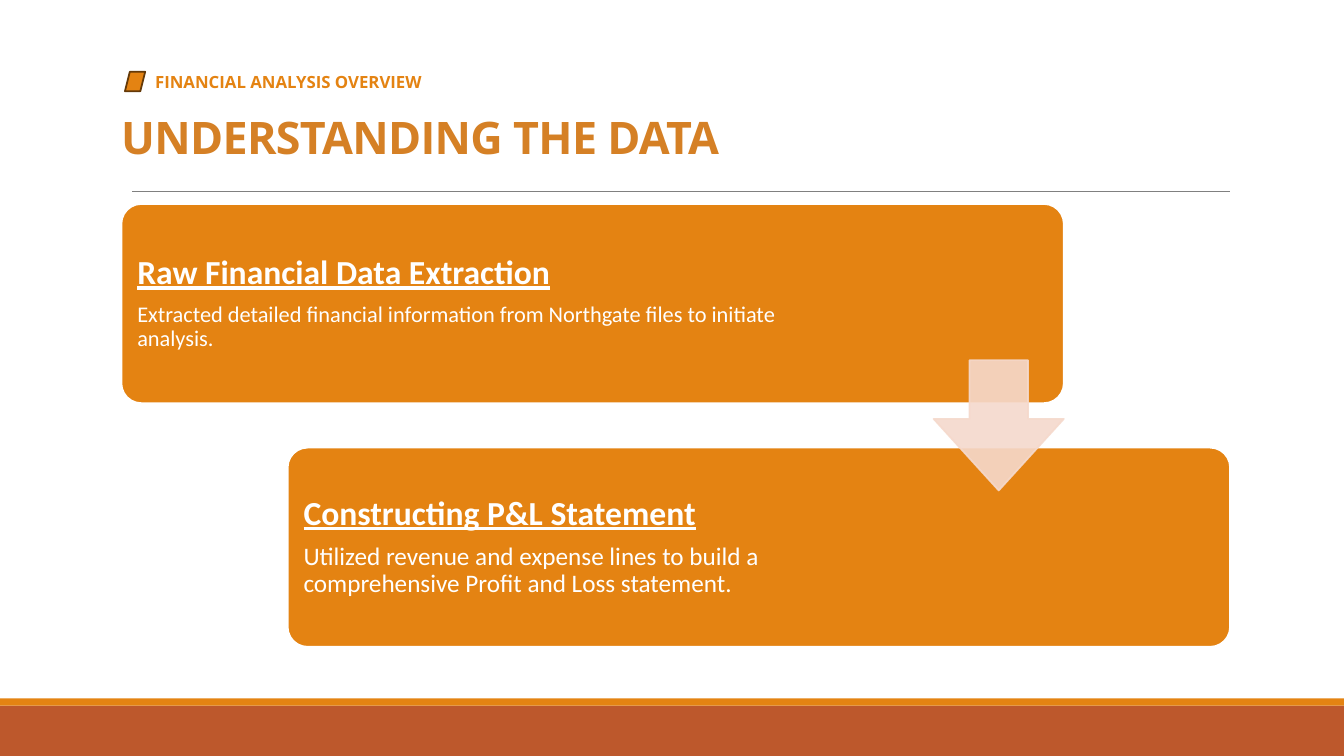
from lxml import etree
from pptx import Presentation
from pptx.dml.color import RGBColor
from pptx.enum.shapes import MSO_CONNECTOR, MSO_SHAPE
from pptx.enum.text import MSO_ANCHOR, PP_ALIGN
from pptx.oxml.ns import qn
from pptx.util import Cm, Pt

RECTANGLE, ROUNDED = MSO_SHAPE.RECTANGLE, MSO_SHAPE.ROUNDED_RECTANGLE
PARALLELOGRAM, DOWN_ARROW = MSO_SHAPE.PARALLELOGRAM, MSO_SHAPE.DOWN_ARROW
TOP, MIDDLE, BOTTOM = MSO_ANCHOR.TOP, MSO_ANCHOR.MIDDLE, MSO_ANCHOR.BOTTOM
STRAIGHT, LEFT = MSO_CONNECTOR.STRAIGHT, PP_ALIGN.LEFT

TITLE = "UNDERSTANDING THE DATA"
OVERLINE = "FINANCIAL ANALYSIS OVERVIEW"
# heading, body, body size in points, text width in cm
STEPS = [
    ("Raw Financial Data Extraction",
     "Extracted detailed financial information from Northgate files to initiate analysis.",
     16, 18.54),
    ("Constructing P&L Statement",
     "Utilized revenue and expense lines to build a comprehensive Profit and Loss statement.",
     18, 16),
]
COLORS = {"orange": "E48312", "rust": "BD582C", "title": "D58025", "brown": "643908",
          "arrow": "F5D9CC", "rule": "808080", "white": "FFFFFF"}
HEADING_FONT, BODY_FONT = "Open Sans", "Calibri"

# Lengths in cm
SLIDE_WIDTH, SLIDE_HEIGHT = 33.87, 19.05
FOOTER_TOP, STRIPE_HEIGHT = 17.78, 0.18
CARD_LEFT, CARD_TOP, CARD_WIDTH, CARD_HEIGHT = 3.06, 5.14, 23.75, 5.02
STEP_RIGHT, STEP_DOWN = 4.19, 6.14
TEXT_MARGIN, CARD_INSET = 0.25, 0.15
ARROW_SIZE, ARROW_TOP = 3.28, 9.08


def color(name):
    return RGBColor.from_string(COLORS[name])


def add_figure(slide, kind, left, top, width, height, fill, line=None, adjustments=()):
    figure = slide.shapes.add_shape(kind, Cm(left), Cm(top), Cm(width), Cm(height))
    figure.shadow.inherit = False
    figure.fill.solid()
    figure.fill.fore_color.rgb = color(fill)
    if line:
        figure.line.color.rgb = color(line)
        figure.line.width = Pt(1.25)
    else:
        figure.line.fill.background()
    for index, value in enumerate(adjustments):
        figure.adjustments[index] = value
    return figure


def add_text_box(slide, left, top, width, height):
    return slide.shapes.add_textbox(Cm(left), Cm(top), Cm(width), Cm(height))


def set_frame(box, anchor):
    frame = box.text_frame
    frame.word_wrap = True
    frame.vertical_anchor = anchor
    return frame


def write(para, text, font, size, ink, bold=False, underline=False, spacing=1.0):
    para.text = text
    para.alignment = LEFT
    para.line_spacing = spacing
    para.font.name = font
    para.font.size = Pt(size)
    para.font.color.rgb = color(ink)
    para.font.bold = bold
    para.font.underline = underline


def add_header(slide):
    title = slide.shapes.title
    title.left, title.top, title.width, title.height = Cm(2.8), Cm(2.74), Cm(28.2), Cm(1.52)
    para = set_frame(title, BOTTOM).paragraphs[0]
    write(para, TITLE, HEADING_FONT, 32, "title", bold=True, spacing=0.85)
    para.runs[0]._r.get_or_add_rPr().set("spc", "-50")

    overline = add_text_box(slide, 3.66, 1.68, 16.94, 0.77)
    write(set_frame(overline, TOP).paragraphs[0], OVERLINE, HEADING_FONT, 12, "orange", bold=True)
    add_figure(slide, PARALLELOGRAM, 3.15, 1.81, 0.51, 0.49, "orange", "brown")

    rule = slide.shapes.add_connector(STRAIGHT, Cm(3.33), Cm(4.82), Cm(31), Cm(4.82))
    rule.line.color.rgb = color("rule")
    rule.line.width = Pt(0.5)
    etree.SubElement(rule._element.spPr, qn("a:effectLst"))


def add_step(slide, index, heading, body, body_size, text_width):
    left = CARD_LEFT + index * STEP_RIGHT
    top = CARD_TOP + index * STEP_DOWN
    add_figure(slide, ROUNDED, left, top, CARD_WIDTH, CARD_HEIGHT, "orange", "white", [0.1])
    box = add_text_box(slide, left + CARD_INSET, top + CARD_INSET,
                       text_width, CARD_HEIGHT - 2 * CARD_INSET)
    frame = set_frame(box, MIDDLE)
    frame.margin_left = frame.margin_right = Cm(TEXT_MARGIN)
    frame.margin_top = frame.margin_bottom = Cm(TEXT_MARGIN)
    first = frame.paragraphs[0]
    write(first, heading, BODY_FONT, 24, "white", bold=True, underline=True, spacing=0.9)
    first.space_after = Pt(8)
    write(frame.add_paragraph(), body, BODY_FONT, body_size, "white", spacing=0.9)


def add_arrow(slide):
    left = CARD_LEFT + CARD_WIDTH - ARROW_SIZE
    arrow = add_figure(slide, DOWN_ARROW, left, ARROW_TOP, ARROW_SIZE, ARROW_SIZE,
                       "arrow", "arrow", [0.45, 0.55])
    for ink in arrow._element.spPr.iter(qn("a:srgbClr")):
        etree.SubElement(ink, qn("a:alpha"), val="90000")


def main():
    deck = Presentation()
    deck.slide_width, deck.slide_height = Cm(SLIDE_WIDTH), Cm(SLIDE_HEIGHT)
    slide = deck.slides.add_slide(deck.slide_layouts.get_by_name("Title Only"))
    add_figure(slide, RECTANGLE, 0, FOOTER_TOP, SLIDE_WIDTH, SLIDE_HEIGHT - FOOTER_TOP, "rust")
    add_figure(slide, RECTANGLE, 0, FOOTER_TOP - STRIPE_HEIGHT, SLIDE_WIDTH, STRIPE_HEIGHT, "orange")
    add_header(slide)
    for index, step in enumerate(STEPS):
        add_step(slide, index, *step)
    add_arrow(slide)
    deck.save("out.pptx")


if __name__ == "__main__":
    main()
